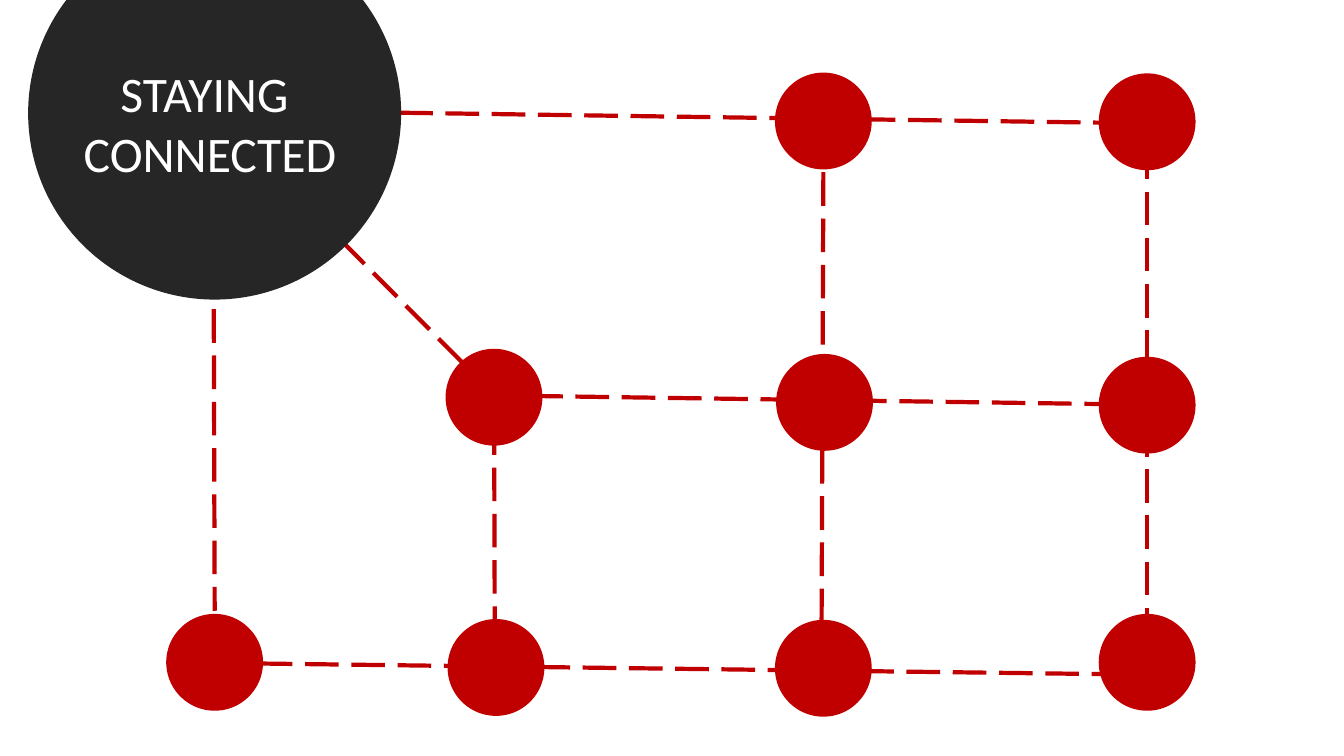
import pptx
import pptx.util
import pptx.dml.color
import pptx.enum.dml
import pptx.enum.shapes
import pptx.enum.text
import lxml.etree

Cm = pptx.util.Cm
Pt = pptx.util.Pt

TITLE = ["STAYING ", "CONNECTED"]
TITLE_BOX = (0.53, 1.47, 9.53, 3.3)
HUB = (0.71, -1.85, 9.4)
DOT_SIZE = 2.44
DOTS = {
    "top": [(19.53, 1.83), (27.69, 1.85)],
    "middle": [(11.23, 8.79), (19.56, 8.92), (27.69, 8.99)],
    "bottom": [(4.19, 15.47), (11.28, 15.6), (19.53, 15.62), (27.69, 15.47)],
}
LINKS = [
    ((10.06, 2.84), (28.35, 3.1)),
    ((12.47, 9.96), (8.28, 5.74)),
    ((5.38, 5.46), (5.41, 15.39)),
    ((28.91, 3.66), (28.91, 16.56)),
    ((12.17, 9.96), (28.35, 10.19)),
    ((4.19, 16.69), (27.99, 16.99)),
    ((20.75, 4.34), (20.7, 16.84)),
    ((12.45, 9.45), (12.47, 16.56)),
]
THEME = {"hub": "262626", "dot": "C00000", "text": "FFFFFF",
         "font": "Calibri", "size": 35.5, "line": 3}


def tint(name):
    return pptx.dml.color.RGBColor.from_string(THEME[name])


def add_disc(slide, left, top, size, color):
    disc = slide.shapes.add_shape(
        pptx.enum.shapes.MSO_SHAPE.OVAL, Cm(left), Cm(top), Cm(size), Cm(size))
    disc.shadow.inherit = False
    disc.fill.solid()
    disc.fill.fore_color.rgb = tint(color)
    disc.line.fill.background()


def add_link(slide, start, end):
    link = slide.shapes.add_connector(
        pptx.enum.shapes.MSO_CONNECTOR.STRAIGHT, *map(Cm, start + end))
    link.line.color.rgb = tint("dot")
    link.line.width = Pt(THEME["line"])
    link.line.dash_style = pptx.enum.dml.MSO_LINE.LONG_DASH
    props = link._element.spPr
    lxml.etree.SubElement(props, pptx.oxml.ns.qn("a:effectLst"))


def add_text(slide, lines, box, *, size, color, font):
    frame = slide.shapes.add_textbox(*map(Cm, box)).text_frame
    frame.word_wrap = True
    frame.auto_size = pptx.enum.text.MSO_AUTO_SIZE.SHAPE_TO_FIT_TEXT
    for i, line in enumerate(lines):
        para = frame.add_paragraph() if i else frame.paragraphs[0]
        para.alignment = pptx.enum.text.PP_ALIGN.CENTER
        run = para.add_run()
        run.text = line
        run.font.size = Pt(size)
        run.font.name = font
        run.font.color.rgb = tint(color)


def main():
    deck = pptx.Presentation()
    deck.slide_width, deck.slide_height = Cm(33.87), Cm(19.05)
    slide = deck.slides.add_slide(deck.slide_layouts[6])
    for start, end in LINKS:
        add_link(slide, start, end)
    add_disc(slide, *HUB, "hub")
    add_text(slide, TITLE, TITLE_BOX, size=THEME["size"],
             color="text", font=THEME["font"])
    for row in DOTS.values():
        for left, top in row:
            add_disc(slide, left, top, DOT_SIZE, "dot")
    deck.save("out.pptx")


if __name__ == "__main__":
    main()
